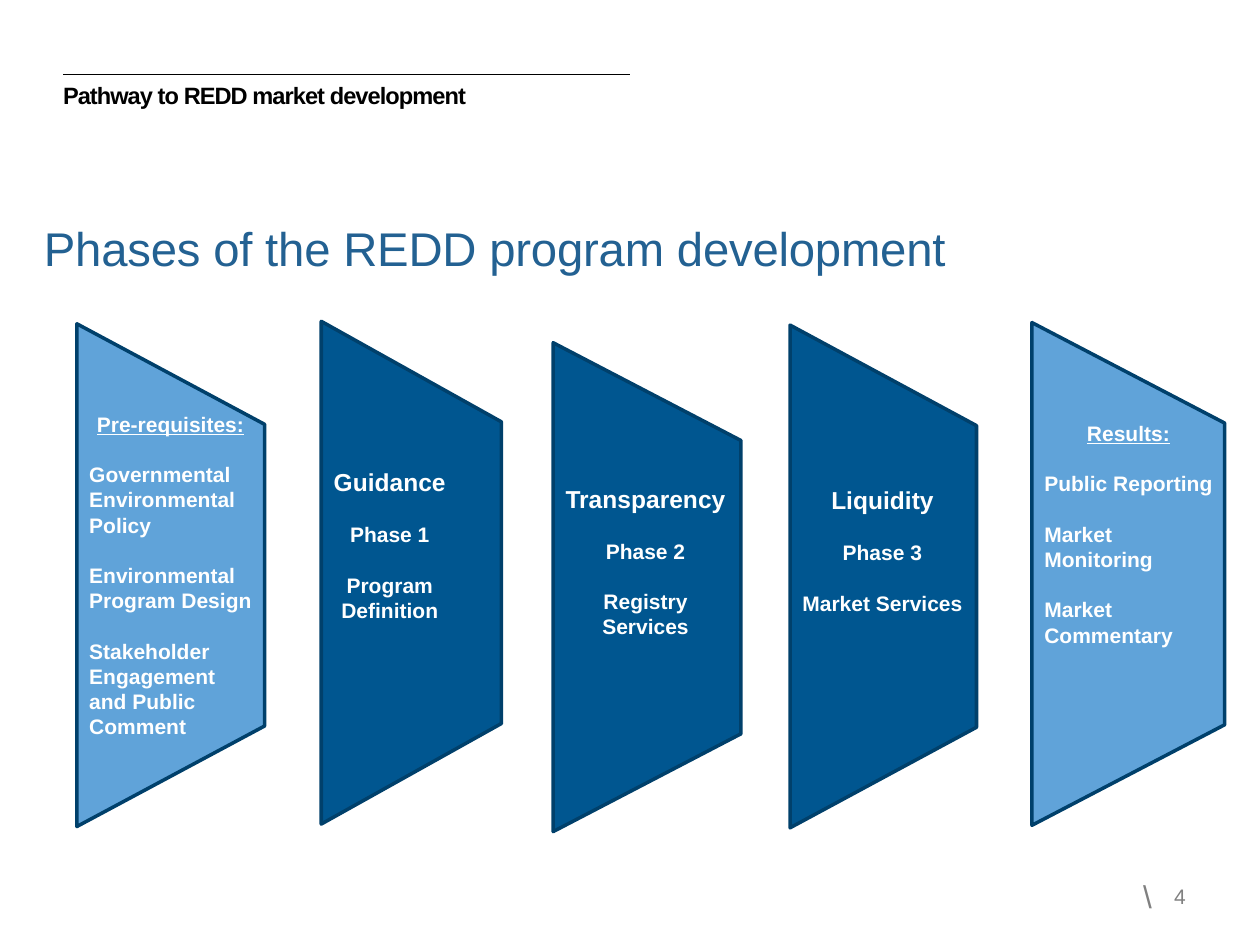
import dataclasses

import pptx
import pptx.dml.color
import pptx.enum.shapes
import pptx.enum.text
import pptx.util
from lxml import etree
from pptx.util import Inches, Pt

ALIGN = pptx.enum.text.PP_ALIGN
ANCHOR = pptx.enum.text.MSO_ANCHOR
A = "{http://schemas.openxmlformats.org/drawingml/2006/main}"


@dataclasses.dataclass(frozen=True)
class Theme:
    """Colours, font and type sizes of the deck."""
    font: str = "Arial"
    black: str = "000000"
    white: str = "FFFFFF"
    grey: str = "808080"
    heading: str = "236192"
    dark: str = "005690"
    light: str = "60A3D9"
    edge: str = "00406B"
    title_size: float = 13.5
    heading_size: float = 27
    phase_size: float = 14
    text_size: float = 12
    slash_size: float = 18


T = Theme()


def rgb(value):
    """Turn a hex string into a colour."""
    return pptx.dml.color.RGBColor.from_string(value)


def set_all(obj, values):
    """Set every attribute in a dict of format values."""
    for name, value in values.items():
        setattr(obj, name, value)


def write(p, text, size, color, align=ALIGN.LEFT, spacing=0, **font):
    """Write one formatted run into a paragraph."""
    p.alignment = align
    r = p.add_run()
    r.text = text
    set_all(r.font, dict(name=T.font, size=Pt(size), **font))
    r.font.color.rgb = rgb(color)
    if spacing:
        r._r.get_or_add_rPr().set("spc", str(spacing))


def add_text(s, box, text, size, color, frame, **style):
    """Add a one-line text box."""
    tf = s.shapes.add_textbox(*map(Inches, box)).text_frame
    set_all(tf, frame)
    write(tf.paragraphs[0], text, size, color, **style)


def add_header(s, box):
    """Add the slide title with the rule above it."""
    left, top, width, height = map(Inches, box)
    rule = s.shapes.add_connector(
        pptx.enum.shapes.MSO_CONNECTOR.STRAIGHT, left, top, left + width, top)
    rule.line.color.rgb = rgb(T.black)
    rule.line.width = Pt(0.5)
    etree.SubElement(rule._element.spPr, A + "effectLst")
    sp = s.shapes.title
    set_all(sp, dict(left=left, top=top, width=width, height=height))
    tf = sp.text_frame
    set_all(tf, dict(margin_left=0, margin_right=0, margin_bottom=0,
                     margin_top=Inches(0.05), word_wrap=True,
                     vertical_anchor=ANCHOR.TOP,
                     auto_size=pptx.enum.text.MSO_AUTO_SIZE.NONE))
    write(tf.paragraphs[0], "Pathway to REDD market development",
          T.title_size, T.black, spacing=-50, bold=True)


def add_footer(s, box):
    """Add the slash and the slide number."""
    left, top, width, height = box
    add_text(s, (left, top, 0.29, height), "\\", T.slash_size, T.grey,
             dict(word_wrap=False), align=ALIGN.RIGHT)
    add_text(s, (left + 0.1, top, width - 0.1, height), "4", T.text_size, T.grey,
             dict(word_wrap=True, vertical_anchor=ANCHOR.MIDDLE), align=ALIGN.RIGHT)


def add_panel(s, box, fill, lines, lift):
    """Add a tapered panel turned on its side, its upright text raised by a left inset."""
    left, top, width, height = box
    sp = s.shapes.add_shape(
        pptx.enum.shapes.MSO_SHAPE.FLOWCHART_MANUAL_OPERATION,
        Inches(left + (width - height) / 2), Inches(top + (height - width) / 2),
        Inches(height), Inches(width))
    sp.rotation = 270
    sp.shadow.inherit = False
    sp.fill.solid()
    sp.fill.fore_color.rgb = rgb(fill)
    sp.line.color.rgb = rgb(T.edge)
    sp.line.width = Pt(2)
    tf = sp.text_frame
    set_all(tf, dict(word_wrap=True, vertical_anchor=ANCHOR.MIDDLE,
                     margin_left=Inches(0.1) + Pt(lift)))
    tf._txBody.bodyPr.set("vert", "eaVert")
    for i, (text, style) in enumerate(lines):
        p = tf.add_paragraph() if i else tf.paragraphs[0]
        if i:
            p.space_before = Pt(T.text_size * 1.2)
        write(p, text, color=T.white, bold=True, **style)


def add_list_panel(s, box, head, items, lift):
    """Add a light panel with an underlined head and left-aligned items."""
    lines = [(head, dict(size=T.text_size, align=ALIGN.CENTER, underline=True))]
    lines += [(item, dict(size=T.text_size)) for item in items]
    add_panel(s, box, T.light, lines, lift)


def add_phase_panel(s, box, name, phase, service, lift):
    """Add a dark panel for one numbered phase."""
    lines = [(name, dict(size=T.phase_size, align=ALIGN.CENTER))]
    lines += [(text, dict(size=T.text_size, align=ALIGN.CENTER))
              for text in (phase, service)]
    add_panel(s, box, T.dark, lines, lift)


def main():
    """Build the slide and save it."""
    prs = pptx.Presentation()
    prs.slide_width, prs.slide_height = Inches(10), Inches(7.5)
    s = prs.slides.add_slide(prs.slide_layouts[5])
    add_header(s, (0.5, 0.59, 4.5, 0.45))
    add_text(s, (0.25, 1.69, 9.48, 0.56), "Phases of the REDD program development",
             T.heading_size, T.heading, dict(word_wrap=True), spacing=-10)
    add_list_panel(s, (0.61, 2.57, 1.49, 3.99), "Pre-requisites:",
                   ("Governmental Environmental Policy",
                    "Environmental Program Design",
                    "Stakeholder Engagement and Public Comment"), 0)
    phases = (((2.55, 2.55, 1.43, 3.99), "Guidance", "Program Definition", 28),
              ((4.39, 2.72, 1.49, 3.88), "Transparency", "Registry Services", 26),
              ((6.27, 2.58, 1.48, 3.99), "Liquidity", "Market Services", 26))
    for i, (box, name, service, lift) in enumerate(phases, 1):
        add_phase_panel(s, box, name, f"Phase {i}", service, lift)
    add_list_panel(s, (8.19, 2.56, 1.53, 3.99), "Results:",
                   ("Public Reporting", "Market Monitoring", "Market Commentary"), 42)
    add_footer(s, (8.95, 6.91, 0.56, 0.4))
    prs.save("out.pptx")


if __name__ == "__main__":
    main()
